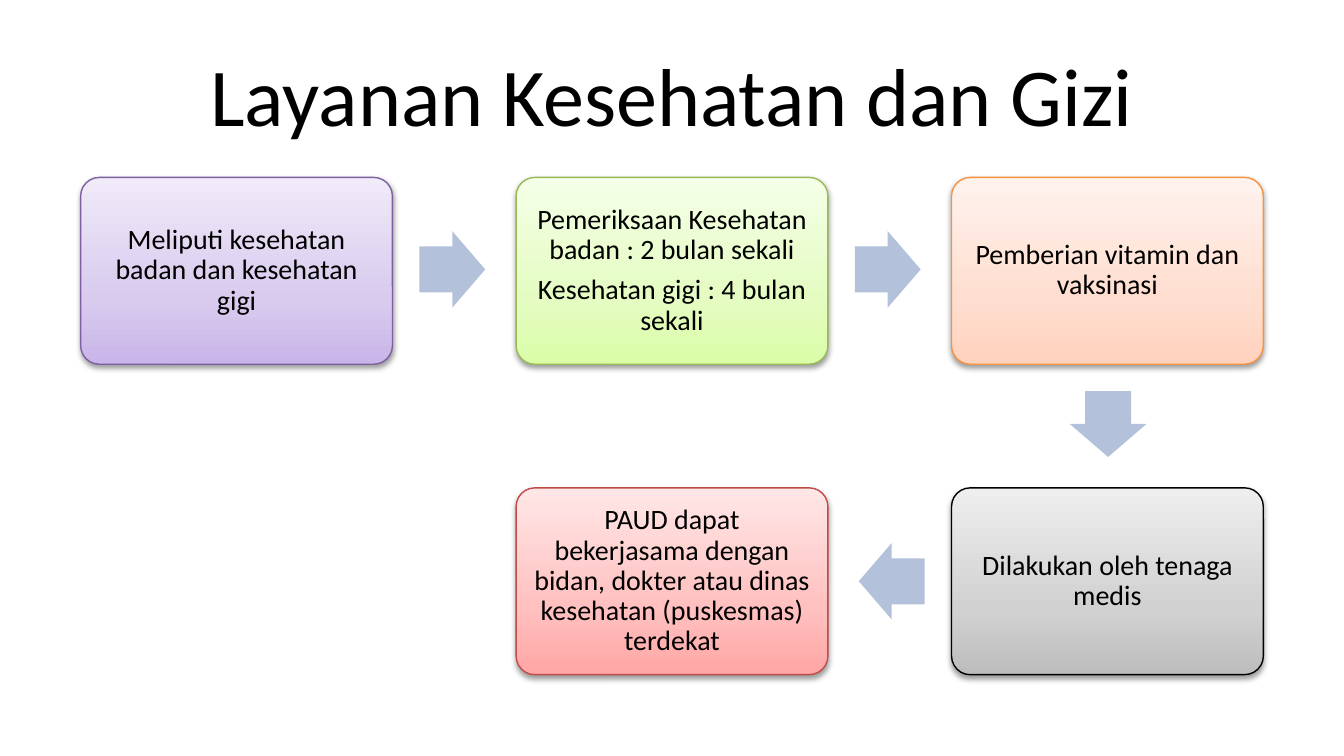
"""Build a slide with a five-step flow of health and nutrition services."""
from copy import deepcopy

from lxml import etree
from pptx import Presentation
from pptx.dml.color import RGBColor
from pptx.enum.shapes import MSO_SHAPE
from pptx.enum.text import MSO_ANCHOR, PP_ALIGN
from pptx.oxml.ns import qn
from pptx.util import Inches, Pt

ROUND, ARROW = MSO_SHAPE.ROUNDED_RECTANGLE, MSO_SHAPE.RIGHT_ARROW
MIDDLE, CENTER = MSO_ANCHOR.MIDDLE, PP_ALIGN.CENTER
HEX = {
    "text": "000000", "arrow": "B3C1DB",
    "purple": ("7D60A0", "C9B5E8", "D8CBEE", "F0EAF9"),
    "green": ("98B955", "DAFDA7", "E4FCC2", "F5FFE7"),
    "orange": ("F69240", "FFD2BD", "FFDED0", "FFF2ED"),
    "gray": ("000000", "BDBDBD", "D1D1D1", "EEEEEE"),
    "red": ("BF4C48", "FFA6A5", "FFC0BF", "FFE7E7"),
}
LEFT, TOP, WIDE, HIGH = 0.6, 1.32, 2.32, 1.39
STEP_X, STEP_Y = 3.24, 2.31
STEPS = [
    (0, 0, "purple", ["Meliputi kesehatan badan dan kesehatan gigi"]),
    (1, 0, "green", ["Pemeriksaan Kesehatan badan : 2 bulan sekali",
                     "Kesehatan gigi : 4 bulan sekali"]),
    (2, 0, "orange", ["Pemberian vitamin dan vaksinasi"]),
    (2, 1, "gray", ["Dilakukan oleh tenaga medis"]),
    (1, 1, "red", ["PAUD dapat bekerjasama dengan bidan, dokter atau dinas "
                   "kesehatan (puskesmas) terdekat"]),
]
ARROWS = [(3.12, 1.72, 0), (6.36, 1.72, 0), (8, 2.87, 90), (6.39, 4.04, 180)]


def write(frame, lines, size):
    frame.word_wrap = True
    frame.vertical_anchor = MIDDLE
    for i, line in enumerate(lines):
        para = frame.paragraphs[0] if i == 0 else frame.add_paragraph()
        para.text = line
        para.alignment = CENTER
        para.font.size = Pt(size)
        para.font.name = "Calibri"
        para.font.color.rgb = RGBColor.from_string(HEX["text"])


def shade(shape, tones):
    shape.fill.gradient()
    shape.fill.gradient_angle = 90
    stops = shape._element.spPr.find(qn("a:gradFill")).find(qn("a:gsLst"))
    stops.insert(1, deepcopy(stops[0]))
    for stop, spot, tone in zip(shape.fill.gradient_stops, (0, 0.35, 1), tones):
        stop.position = spot
        stop.color.rgb = RGBColor.from_string(tone)
    shape.shadow.inherit = False
    effect = shape._element.spPr.find(qn("a:effectLst"))
    shadow = etree.SubElement(effect, qn("a:outerShdw"), blurRad="40000",
                              dist="20000", dir="5400000", rotWithShape="0")
    black = etree.SubElement(shadow, qn("a:srgbClr"), val="000000")
    etree.SubElement(black, qn("a:alpha"), val="38000")


deck = Presentation()
deck.slide_width = Inches(10)
deck.slide_height = Inches(10) * 9 // 16
slide = deck.slides.add_slide(deck.slide_layouts[6])

title = slide.shapes.add_textbox(Inches(0.5), Inches(0.23), Inches(9), Inches(0.94))
write(title.text_frame, ["Layanan Kesehatan dan Gizi"], 44)

for col, row, hue, lines in STEPS:
    card = slide.shapes.add_shape(
        ROUND, Inches(LEFT + col * STEP_X), Inches(TOP + row * STEP_Y),
        Inches(WIDE), Inches(HIGH))
    card.adjustments[0] = 0.1
    edge, *tones = HEX[hue]
    shade(card, tones)
    card.line.color.rgb = RGBColor.from_string(edge)
    card.line.width = Pt(0.75)
    frame = card.text_frame
    frame.margin_left = frame.margin_right = Inches(0.06)
    frame.margin_top = frame.margin_bottom = Inches(0.06)
    write(frame, lines, 15)
    for para in frame.paragraphs:
        para.line_spacing = 0.9
        para.space_after = Pt(5.25)

for x, y, turn in ARROWS:
    arrow = slide.shapes.add_shape(ARROW, Inches(x), Inches(y), Inches(0.49), Inches(0.57))
    arrow.adjustments[0], arrow.adjustments[1] = 0.6, 0.5
    arrow.rotation = turn
    arrow.fill.solid()
    arrow.fill.fore_color.rgb = RGBColor.from_string(HEX["arrow"])
    arrow.line.fill.background()
    arrow.shadow.inherit = False

deck.save("out.pptx")
